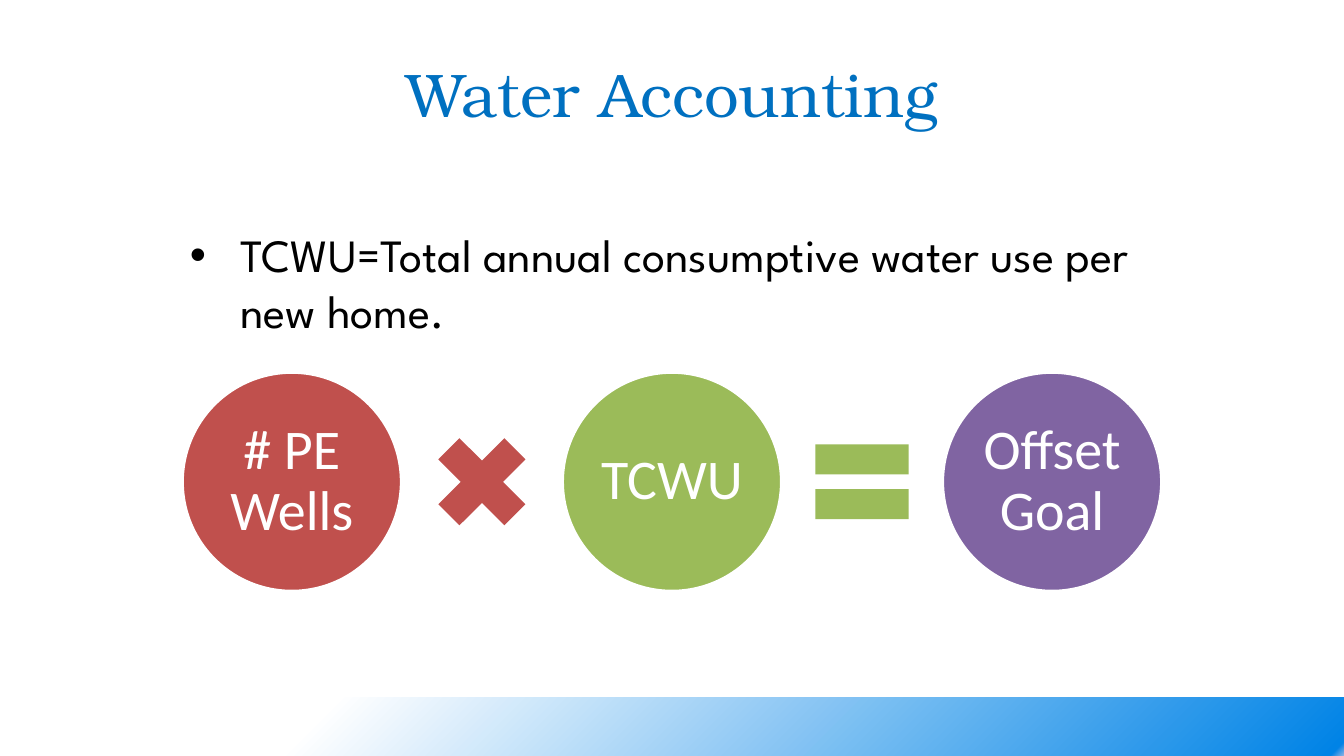
from lxml.etree import SubElement
from pptx import Presentation
from pptx.dml.color import RGBColor
from pptx.enum.shapes import MSO_SHAPE
from pptx.enum.text import MSO_ANCHOR, PP_ALIGN
from pptx.oxml import parse_xml
from pptx.oxml.ns import nsdecls, qn
from pptx.util import Inches, Pt

WIDTH, HEIGHT = 13.33, 7.5
RED, GREEN, PURPLE, WHITE = "C0504D", "9BBB59", "8064A2", "FFFFFF"


def color(value):
    return RGBColor.from_string(value)


def write(box, text, font, size, shade, align, anchor, inset=(0.1, 0.05)):
    frame = box.text_frame
    side, top = map(Inches, inset)
    settings = {"word_wrap": True, "vertical_anchor": anchor, "margin_left": side,
                "margin_right": side, "margin_top": top, "margin_bottom": top}
    for name, value in settings.items():
        setattr(frame, name, value)
    para = frame.paragraphs[0]
    para.alignment = align
    span = para.add_run()
    span.text = text
    for name, value in {"name": font, "size": Pt(size)}.items():
        setattr(span.font, name, value)
    span.font.color.rgb = color(shade)
    return para


deck = Presentation()
deck.slide_width, deck.slide_height = Inches(WIDTH), Inches(HEIGHT)
page = deck.slides.add_slide(deck.slide_layouts[6])

band_height = 0.58
band = page.shapes.add_shape(MSO_SHAPE.RECTANGLE, 0, Inches(HEIGHT - band_height),
                             Inches(WIDTH), Inches(band_height))
band.shadow.inherit = False
band.line.fill.background()
stops = "".join(f'<a:gs pos="{share * 1000}"><a:srgbClr val="{shade}"/></a:gs>'
                for share, shade in [(0, "8EB4E3"), (1, "0083E6"), (76, WHITE)])
gradient = parse_xml(f'<a:gradFill {nsdecls("a")} rotWithShape="1"><a:gsLst>{stops}</a:gsLst>'
                     '<a:path path="circle"><a:fillToRect l="100000" t="100000"/></a:path>'
                     '</a:gradFill>')
band._element.spPr.find(qn("a:prstGeom")).addnext(gradient)

margin = WIDTH * 0.05
title = page.shapes.add_textbox(Inches(margin), Inches(0.3),
                                Inches(WIDTH - 2 * margin), Inches(1.25))
write(title, "Water Accounting", "TeX Gyre Bonum", 44, "0070C0",
      PP_ALIGN.CENTER, MSO_ANCHOR.MIDDLE)

circle, sign, gap = 2.17, 1.26, 0.17
step = (circle + sign) / 2 + gap
middle = 4.78
equation = [
    (MSO_SHAPE.OVAL, circle, RED, "# PE Wells"),
    (MSO_SHAPE.MATH_MULTIPLY, sign, RED, ""),
    (MSO_SHAPE.OVAL, circle, GREEN, "TCWU"),
    (MSO_SHAPE.MATH_EQUAL, sign, GREEN, ""),
    (MSO_SHAPE.OVAL, circle, PURPLE, "Offset Goal"),
]
for column, (kind, size, shade, label) in enumerate(equation):
    center = WIDTH / 2 + (column - 2) * step
    term = page.shapes.add_shape(kind, Inches(center - size / 2), Inches(middle - size / 2),
                                 Inches(size), Inches(size))
    term.shadow.inherit = False
    term.fill.solid()
    term.fill.fore_color.rgb = color(shade)
    if label:
        term.line.color.rgb = color(WHITE)
        term.line.width = Pt(2)
        para = write(term, label, "Calibri", 40, WHITE, PP_ALIGN.CENTER,
                     MSO_ANCHOR.MIDDLE, (0.06, 0.06))
        para.line_spacing = 0.9
    else:
        term.line.fill.background()

note_width = 9.76
note = page.shapes.add_textbox(Inches((WIDTH - note_width) / 2), Inches(2.2),
                               Inches(note_width), Inches(1.21))
para = write(note, "TCWU=Total annual consumptive water use per new home.",
             "League Spartan", 33, "000000", PP_ALIGN.LEFT, MSO_ANCHOR.TOP)
properties = para._p.get_or_add_pPr()
properties.set("marL", str(Inches(0.5)))
properties.set("indent", str(-Inches(0.5)))
SubElement(properties, qn("a:buFont"), typeface="Arial")
SubElement(properties, qn("a:buChar"), char="•")

deck.save("out.pptx")
